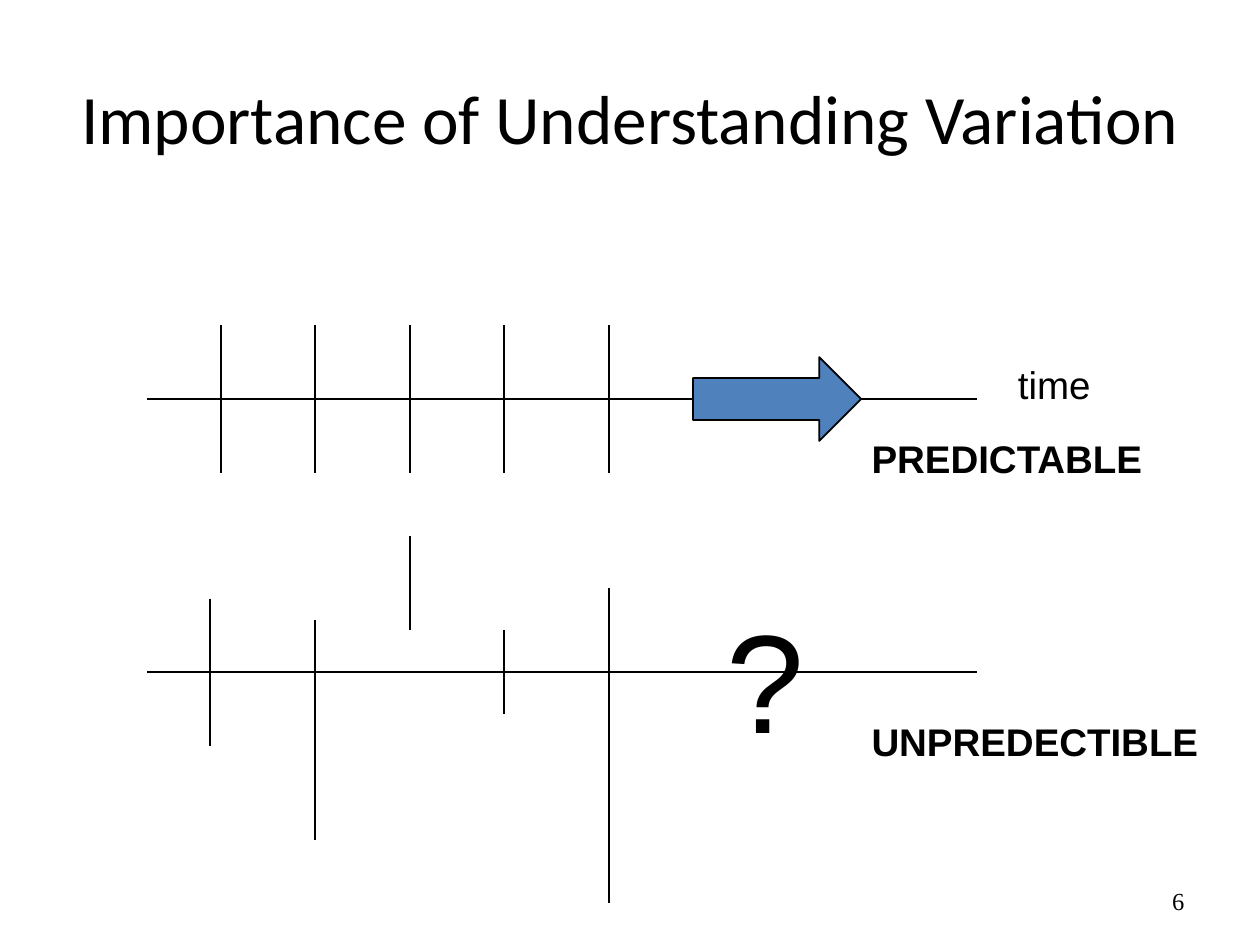
from lxml import etree
from pptx import Presentation
from pptx.dml.color import RGBColor
from pptx.enum.shapes import MSO_CONNECTOR, MSO_SHAPE
from pptx.enum.text import MSO_ANCHOR, MSO_AUTO_SIZE, PP_ALIGN
from pptx.oxml.ns import qn
from pptx.util import Cm, Pt

LINE = MSO_CONNECTOR.STRAIGHT
ARROW = MSO_SHAPE.RIGHT_ARROW
TOP, MID = MSO_ANCHOR.TOP, MSO_ANCHOR.MIDDLE
LEFT, CENTER, RIGHT = PP_ALIGN.LEFT, PP_ALIGN.CENTER, PP_ALIGN.RIGHT
NONE, GROW = MSO_AUTO_SIZE.NONE, MSO_AUTO_SIZE.SHAPE_TO_FIT_TEXT


def color(code):
    return RGBColor.from_string(code)


class Board:
    """Hold the style and the current slide."""

    ink = "000000"
    blue = "4F81BD"
    width = Pt(1)

    def __init__(self, slide):
        self.slide = slide

    def stroke(self, item):
        item.line.color.rgb = color(self.ink)
        item.line.width = self.width

    def line(self, *ends):
        item = self.slide.shapes.add_connector(LINE, *map(Cm, ends))
        self.stroke(item)
        etree.SubElement(item._element.spPr, qn("a:effectLst"))

    def arrow(self, *box):
        item = self.slide.shapes.add_shape(ARROW, *map(Cm, box))
        item.shadow.inherit = False
        item.fill.solid()
        item.fill.fore_color.rgb = color(self.blue)
        self.stroke(item)

    def text(self, words, *box, size=22, font="Arial", bold=False,
             align=LEFT, anchor=TOP, wrap=False):
        frame = self.slide.shapes.add_textbox(*map(Cm, box)).text_frame
        frame.word_wrap = wrap
        frame.auto_size = NONE if wrap else GROW
        frame.vertical_anchor = anchor
        para = frame.paragraphs[0]
        para.alignment = align
        run = para.add_run()
        run.text = words
        run.font.size = Pt(size)
        run.font.name = font
        run.font.bold = bold
        run.font.color.rgb = color(self.ink)


def main():
    deck = Presentation()
    deck.slide_width, deck.slide_height = Cm(25.4), Cm(19.05)
    board = Board(deck.slides.add_slide(deck.slide_layouts[6]))

    board.text("Importance of Understanding Variation", 1.27, 0.76, 22.86, 3.18,
               size=39.6, font="Calibri", align=CENTER, anchor=MID, wrap=True)
    board.text("6", 18.21, 17.65, 5.92, 1.02, size=14,
               font="Times New Roman", align=RIGHT, anchor=MID, wrap=True)

    for y in (8.04, 13.55):
        board.line(2.96, y, 19.69, y)

    even = [(x, 6.56, 9.53) for x in (4.45, 6.35, 8.26, 10.16, 12.28)]
    uneven = [(4.23, 12.07, 15.03), (6.35, 12.49, 16.93), (8.26, 10.8, 12.7),
              (10.16, 12.7, 14.39), (12.28, 11.85, 18.2)]
    for x, top, end in even + uneven:
        board.line(x, top, x, end)

    board.arrow(13.97, 7.2, 3.39, 1.69)
    board.text("time", 20.27, 7.16, 1.98, 1.19)
    board.text("PREDICTABLE", 17.32, 8.64, 6.02, 1.19, bold=True)
    board.text("?", 14.39, 11.85, 2.08, 3.63, size=80)
    board.text("UNPREDECTIBLE", 17.32, 14.35, 7.11, 1.19, bold=True)

    deck.save("out.pptx")


if __name__ == "__main__":
    main()
